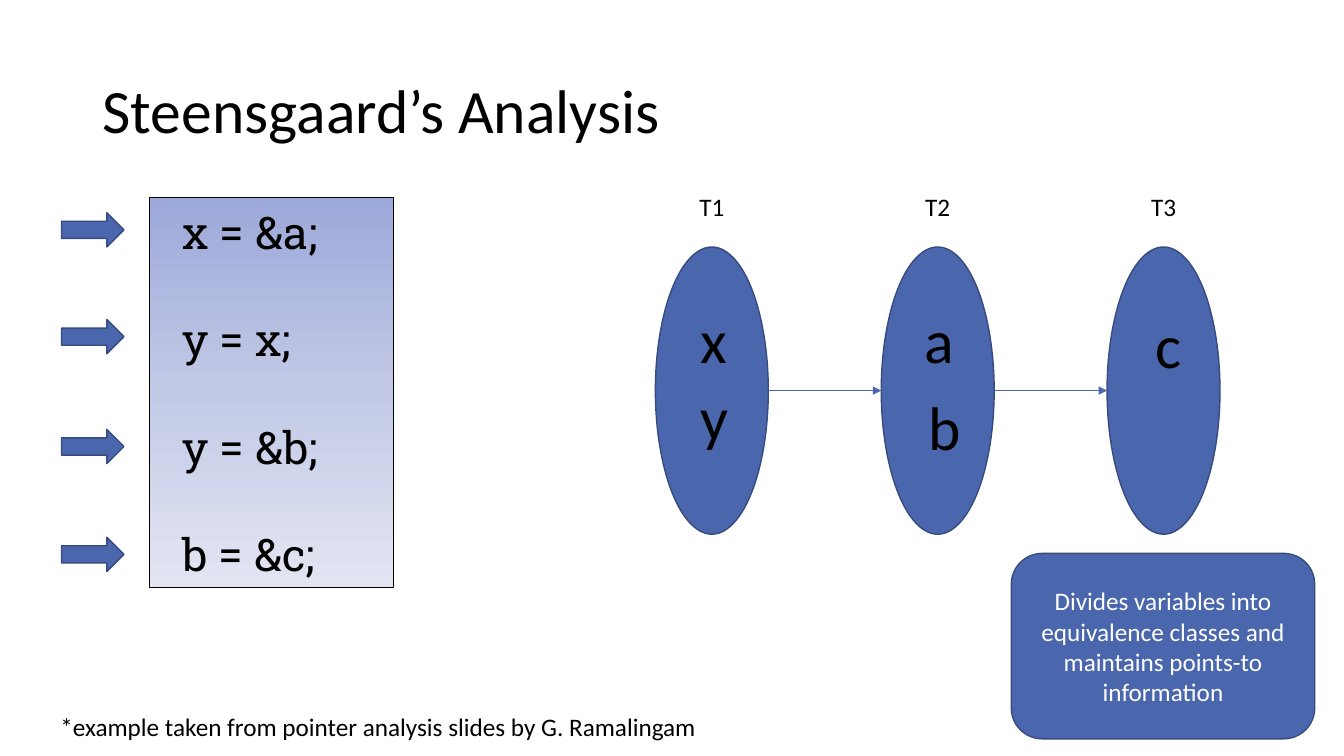
"""Build the Steensgaard's Analysis slide."""
from copy import deepcopy

from lxml.etree import SubElement
from pptx import Presentation
from pptx.dml.color import RGBColor
from pptx.enum.shapes import MSO_CONNECTOR as CONN, MSO_SHAPE as SHAPE
from pptx.enum.text import MSO_ANCHOR as ANCHOR, PP_ALIGN as ALIGN
from pptx.oxml.ns import qn
from pptx.util import Inches, Pt

COLORS = {"text": "000000", "light": "FFFFFF", "fill": "4A66AC", "edge": "374B7F",
          "top": "9CA8D9", "middle": "C3CAE6", "bottom": "E2E5F2"}
GRADIENT = [(0, "top"), (0.5, "middle"), (1, "bottom")]
TITLE = "Steensgaard’s Analysis"
CODE = ["x = &a;", "y = x;", "y = &b;", "b = &c;"]
ARROW_TOPS = [2.11, 3.17, 4.26, 5.33]
CLASSES = ["T1", "T2", "T3"]
MEMBERS = [("x", 6.85, 2.95), ("y", 6.85, 3.71), ("a", 9.07, 2.95),
           ("b", 9.11, 3.81), ("c", 11.36, 3)]
NOTE = "Divides variables into equivalence classes and maintains points-to information"
SOURCE = "*example taken from pointer analysis slides by G. Ramalingam"

CLASS_LEFT, CLASS_TOP, CLASS_W, CLASS_H, CLASS_STEP = 6.5, 2.45, 1.12, 2.85, 2.24
LABEL_W = 0.78


def rgb(name):
    return RGBColor.from_string(COLORS[name])


def write(tf, lines, size, font="Calibri", color="text", align=ALIGN.LEFT, anchor=ANCHOR.TOP):
    tf.word_wrap = True
    tf.vertical_anchor = anchor
    for i, line in enumerate(lines):
        p = tf.add_paragraph() if i else tf.paragraphs[0]
        p.alignment = align
        r = p.add_run()
        r.text = line
        r.font.size, r.font.name = Pt(size), font
        r.font.color.rgb = rgb(color)


def add_text(slide, box, text, size, **style):
    tf = slide.shapes.add_textbox(*map(Inches, box)).text_frame
    write(tf, [text], size, **style)
    return tf


def add_block(slide, kind, box):
    s = slide.shapes.add_shape(kind, *map(Inches, box))
    s.shadow.inherit = False
    s.fill.solid()
    s.fill.fore_color.rgb = rgb("fill")
    s.line.color.rgb = rgb("edge")
    s.line.width = Pt(1)
    return s


def add_code(slide):
    s = add_block(slide, SHAPE.RECTANGLE, (1.48, 1.96, 2.42, 3.87))
    s.line.color.rgb = rgb("text")
    s.line.width = Pt(0.75)
    s.fill.gradient()
    s.fill.gradient_angle = 270
    stops = s._element.spPr.find(qn("a:gradFill")).find(qn("a:gsLst"))
    stops.append(deepcopy(stops[-1]))
    for stop, (position, color) in zip(s.fill.gradient_stops, GRADIENT):
        stop.position = position
        stop.color.rgb = rgb(color)
    tf = s.text_frame
    tf.margin_left = Inches(0.33)
    write(tf, CODE, 32, font="Roboto Slab")
    for p in tf.paragraphs:
        p.line_spacing = Pt(40)
    for p in tf.paragraphs[:-1]:
        p.space_after = Pt(36.7)


def add_classes(slide):
    ovals = []
    for i, label in enumerate(CLASSES):
        left = CLASS_LEFT + i * CLASS_STEP
        ovals.append(add_block(slide, SHAPE.OVAL, (left, CLASS_TOP, CLASS_W, CLASS_H)))
        add_text(slide, (left + (CLASS_W - LABEL_W) / 2, 1.85, LABEL_W, 0.4),
                 label, 18, align=ALIGN.CENTER)
    for a, b in zip(ovals, ovals[1:]):
        y = a.top + a.height // 2
        c = slide.shapes.add_connector(CONN.STRAIGHT, a.left + a.width, y, b.left, y)
        c.line.color.rgb = rgb("fill")
        c.line.width = Pt(0.5)
        SubElement(c._element.spPr.find(qn("a:ln")), qn("a:tailEnd"), type="triangle")
        SubElement(c._element.spPr, qn("a:effectLst"))
    for name, left, top in MEMBERS:
        add_text(slide, (left, top, 0.53, 0.84), name, 44)


def main():
    prs = Presentation()
    prs.slide_width, prs.slide_height = Inches(13.33), Inches(7.5)
    slide = prs.slides.add_slide(prs.slide_layouts[6])
    title = add_text(slide, (0.92, 0.4, 11.5, 1.45), TITLE, 44, anchor=ANCHOR.MIDDLE)
    title.paragraphs[0].line_spacing = 0.9
    add_code(slide)
    add_text(slide, (0.5, 7.01, 6.79, 0.4), SOURCE, 18)
    add_classes(slide)
    note = add_block(slide, SHAPE.ROUNDED_RECTANGLE, (10.03, 5.49, 3.01, 1.84))
    write(note.text_frame, [NOTE], 18, color="light", align=ALIGN.CENTER, anchor=ANCHOR.MIDDLE)
    for top in ARROW_TOPS:
        add_block(slide, SHAPE.RIGHT_ARROW, (0.61, top, 0.62, 0.34))
    prs.save("out.pptx")


if __name__ == "__main__":
    main()
